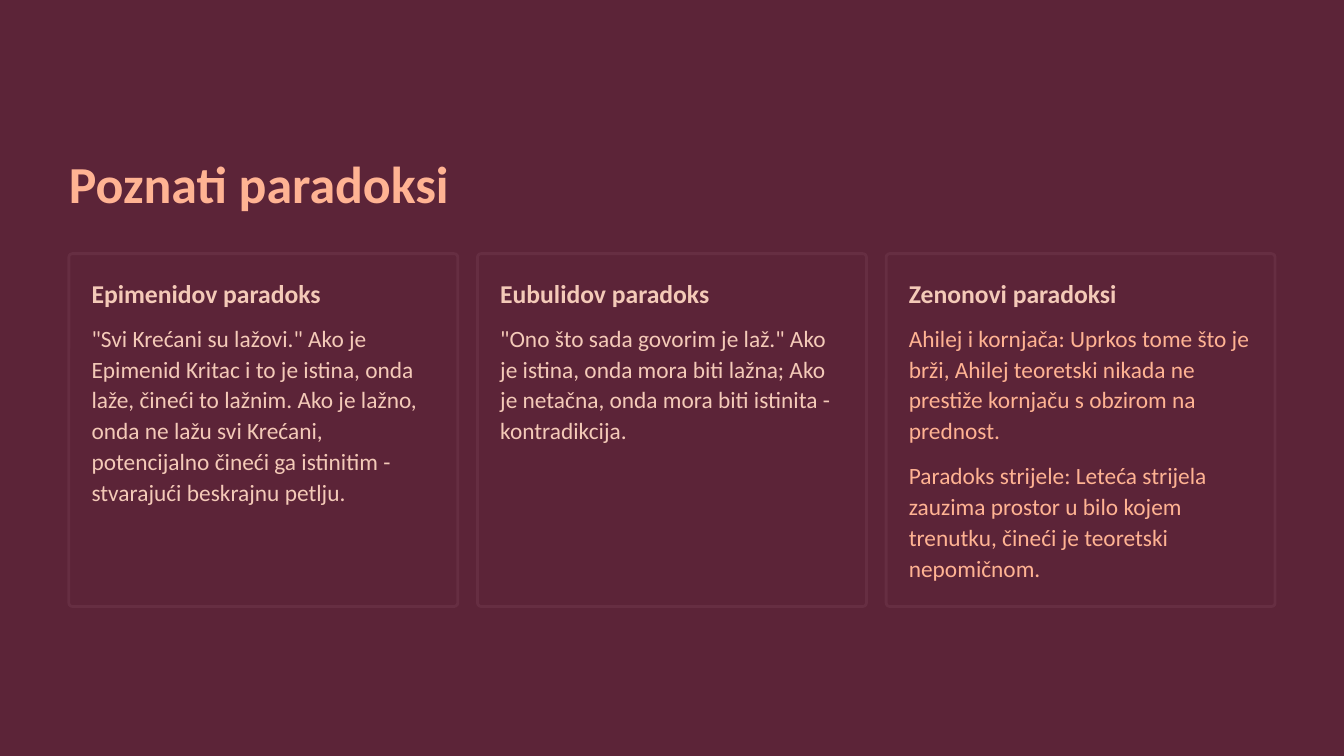
from pptx import Presentation
from pptx.dml.color import RGBColor
from pptx.enum.shapes import MSO_SHAPE as Shape
from pptx.util import Inches, Pt

COLORS = {"back": "5C2438", "edge": "662E42", "peach": "FFB393", "cream": "F4CAB8"}
WIDE, HIGH = 16, 9
SIDE = 0.82
CARD_W, CARD_H, CARD_TOP = 4.63, 4.2, 3.02
PAD = 0.27
LINE_H = 0.375
PARA_GAP = 0.14

# Each card: heading, text color, then (text, number of lines) pairs
CARDS = [
    ("Epimenidov paradoks", "cream", [
        ('"Svi Krećani su lažovi." Ako je Epimenid Kritac i to je istina, onda '
         "laže, čineći to lažnim. Ako je lažno, onda ne lažu svi Krećani, "
         "potencijalno čineći ga istinitim - stvarajući beskrajnu petlju.", 6),
    ]),
    ("Eubulidov paradoks", "cream", [
        ('"Ono što sada govorim je laž." Ako je istina, onda mora biti lažna; '
         "Ako je netačna, onda mora biti istinita - kontradikcija.", 4),
    ]),
    ("Zenonovi paradoksi", "peach", [
        ("Ahilej i kornjača: Uprkos tome što je brži, Ahilej teoretski nikada "
         "ne prestiže kornjaču s obzirom na prednost.", 4),
        ("Paradoks strijele: Leteća strijela zauzima prostor u bilo kojem "
         "trenutku, čineći je teoretski nepomičnom.", 4),
    ]),
]


def paint(fill, color):
    fill.solid()
    fill.fore_color.rgb = RGBColor.from_string(COLORS[color])


def add_text(slide, text, x, y, w, h, size=20, lead=26.5, color="cream",
             bold=False, wrap=True):
    box = slide.shapes.add_textbox(Inches(x), Inches(y), Inches(w), Inches(h))
    frame = box.text_frame
    frame.word_wrap = wrap
    frame.margin_left = frame.margin_right = 0
    frame.margin_top = frame.margin_bottom = 0
    para = frame.paragraphs[0]
    para.line_spacing = Pt(lead)
    run = para.add_run()
    run.text = text
    font = run.font
    font.name, font.size, font.bold = "Calibri", Pt(size), bold
    font.color.rgb = RGBColor.from_string(COLORS[color])


def add_card(slide, x, y, w, h, head, color, paras):
    """Draw a framed card with a heading and its paragraphs stacked below."""
    card = slide.shapes.add_shape(Shape.ROUNDED_RECTANGLE, Inches(x), Inches(y),
                                  Inches(w), Inches(h))
    card.adjustments[0] = 0.01
    card.shadow.inherit = False
    paint(card.fill, "back")
    paint(card.line.fill, "edge")
    card.line.width = Pt(2.4)

    left, top = x + PAD, y + PAD
    add_text(slide, head, left, top, 3.12, 0.39, size=22, lead=28,
             bold=True, wrap=False)
    top += 0.53
    for text, lines in paras:
        tall = lines * LINE_H
        add_text(slide, text, left, top, w - 2 * PAD + 0.01, tall, color=color)
        top += tall + PARA_GAP


def add_cards(slide, x, y, w, h):
    """Spread the cards evenly over the given width."""
    step = (w - CARD_W) / (len(CARDS) - 1)
    for i, (head, color, paras) in enumerate(CARDS):
        add_card(slide, x + i * step, y, CARD_W, h, head, color, paras)


def main():
    deck = Presentation()
    deck.slide_width, deck.slide_height = Inches(WIDE), Inches(HIGH)
    slide = deck.slides.add_slide(deck.slide_layouts[6])
    paint(slide.background.fill, "back")
    add_text(slide, "Poznati paradoksi", SIDE, 1.77, 6.24, 0.78, size=44.5,
             lead=56, color="peach", bold=True, wrap=False)
    add_cards(slide, SIDE, CARD_TOP, WIDE - 2 * SIDE, CARD_H)
    deck.save("out.pptx")


if __name__ == "__main__":
    main()
